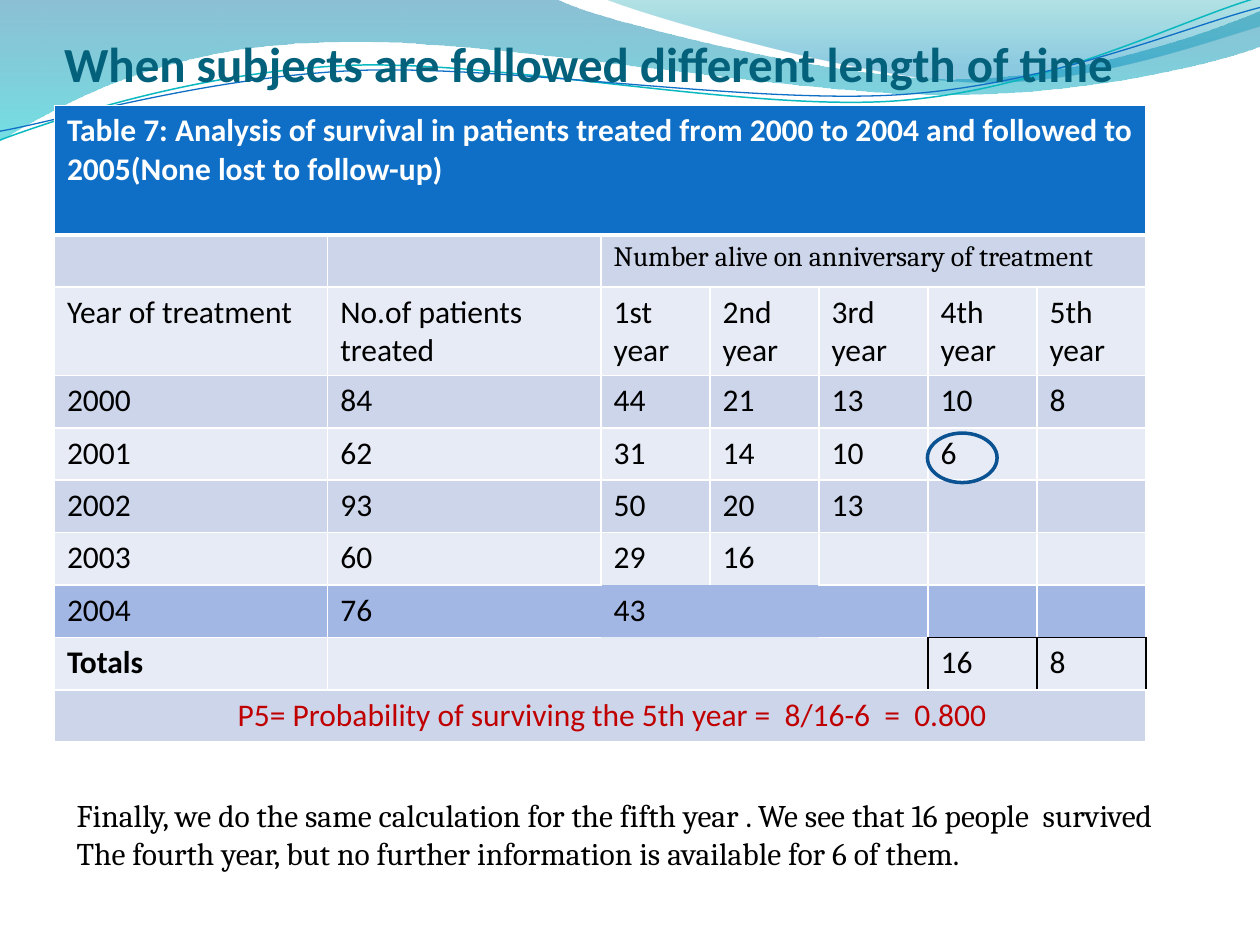
"""Build the survival analysis slide: wave header, follow-up table and closing remark."""
from lxml import etree
from pptx import Presentation
from pptx.dml import color
from pptx.enum import shapes, text
from pptx.oxml import ns
from pptx import util as u

COLORS = {
    "title": "04617B", "header": "0F6FC6", "band": "CCD5EA", "light": "E7EBF5",
    "highlight": "A3B7E5", "result": "C00000", "ring": "0B5292",
    "white": "FFFFFF", "black": "000000", "teal": "0AB8BF",
    "wave_blue": "0074A1", "wave_cyan": "00C6CF", "wave_green": "00A1A9", "wave_sky": "008BBF",
}
BODY, SERIF = "Calibri", "Cambria"

WIDE_WAVE = [(0, -1), (317, -1), (343, 12, 478, 45, 546, 45), (614, 45, 690, 19, 720, 6),
             (721, 26), (708, 32, 626, 55, 537, 54), (446, 54, 275, 20, 185, 24),
             (93, 26, 33, 60, -1, 81)]
RIGHT_WAVE = [(345, -1), (366, 8, 491, 45, 554, 47), (620, 50, 692, 23, 720, 15), (720, -1)]
TEAL_LINE = [(0, 80), (35, 67, 114, 41, 199, 37.4), (284, 34, 427, 64, 513, 57.6),
             (600, 51, 675, 11, 719, -1.4)]
BLUE_LINE = [(0, 75), (34, 69, 118, 44, 204, 40.3), (290, 37, 430, 60, 516, 54),
             (602, 48, 678, 15, 720, 4.3)]

TABLE_ROWS = [
    ["Table 7: Analysis of survival in patients treated from 2000 to 2004 "
     "and followed to 2005(None lost to follow-up)"],
    ["", "", "Number alive on anniversary of treatment"],
    ["Year of treatment", "No.of patients treated",
     "1st year", "2nd year", "3rd year", "4th year", "5th year"],
    ["2000", "84", "44", "21", "13", "10", "8"],
    ["2001", "62", "31", "14", "10", "6"],
    ["2002", "93", "50", "20", "13"],
    ["2003", "60", "29", "16"],
    ["2004", "76", "43"],
    ["Totals", "", "", "", "", "16", "8"],
    ["P5= Probability of surviving the 5th year =  8/16-6  =  0.800"],
]
COLUMN_WIDTHS = [156.2, 156.2] + [62.3] * 5
ROW_HEIGHTS = [74] + [29.95] * 9
TITLE_ROW, SPAN_ROW, LAST_YEAR_ROW, TOTALS_ROW, RESULT_ROW = 0, 1, 7, 8, 9
OPEN_COLUMNS = (2, 3)


def rgb(name):
    """Return the named colour."""
    return color.RGBColor.from_string(COLORS[name])


def style_paragraph(paragraph, font_name, size, color_name="black", bold=False):
    """Set the font of a whole paragraph."""
    font = paragraph.font
    font.name, font.size, font.bold = font_name, u.Pt(size), bold
    font.color.rgb = rgb(color_name)


def add_outline(slide, segments, close):
    """Add a freeform of straight lines and cubic curves."""
    corners = [(u.Pt(segment[-2]), u.Pt(segment[-1])) for segment in segments]
    builder = slide.shapes.build_freeform(*corners[0])
    builder.add_line_segments(corners[1:], close=close)
    shape = builder.convert_to_shape()
    shape.shadow.inherit = False
    lines = list(shape._element.iter(ns.qn("a:lnTo")))
    for line, segment in zip(lines, segments[1:]):
        if len(segment) == 6:
            curve = etree.Element(ns.qn("a:cubicBezTo"))
            for x, y in zip(segment[::2], segment[1::2]):
                etree.SubElement(curve, ns.qn("a:pt"), x=str(u.Pt(x) - shape.left),
                                 y=str(u.Pt(y) - shape.top))
            line.getparent().replace(line, curve)
    return shape


def add_wave(slide, segments, stops):
    """Add a filled wave with a translucent downward gradient."""
    shape = add_outline(slide, segments, True)
    shape.line.fill.background()
    shape.fill.gradient()
    shape.fill.gradient_angle = 270
    for stop, (position, name, _) in zip(shape.fill.gradient_stops, stops):
        stop.position, stop.color.rgb = position, rgb(name)
    for element, (_, _, opacity) in zip(shape._element.iter(ns.qn("a:srgbClr")), stops):
        etree.SubElement(element, ns.qn("a:alpha"), val=str(opacity * 1000))


def add_curve(slide, segments, color_name, width):
    """Add an open curved line."""
    shape = add_outline(slide, segments, False)
    shape.fill.background()
    shape.line.color.rgb, shape.line.width = rgb(color_name), u.Pt(width)


def add_ring(slide, left, top, width, height):
    """Add an unfilled ellipse that marks a value."""
    shape = slide.shapes.add_shape(shapes.MSO_SHAPE.OVAL, u.Pt(left), u.Pt(top),
                                   u.Pt(width), u.Pt(height))
    shape.shadow.inherit = False
    shape.fill.background()
    shape.line.color.rgb, shape.line.width = rgb("ring"), u.Pt(2)


def add_text(slide, box, lines, **style):
    """Add a text box with one paragraph per line."""
    frame = slide.shapes.add_textbox(*map(u.Pt, box)).text_frame
    frame.word_wrap = True
    frame.text = "\n".join(lines)
    for paragraph in frame.paragraphs:
        style_paragraph(paragraph, **style)
    return frame


def horizontal_border(boundary, column):
    """Return colour and width of the rule above row number boundary."""
    if boundary in (LAST_YEAR_ROW, TOTALS_ROW) and column in OPEN_COLUMNS:
        return None, 0
    if boundary == TOTALS_ROW and column >= 5:
        return "black", 1
    return "white", 3 if boundary == 1 else 1


def vertical_border(row, boundary):
    """Return colour and width of the rule left of column number boundary."""
    if row in (LAST_YEAR_ROW, TOTALS_ROW) and boundary in (2, 3, 4):
        return None, 0
    return ("black" if row == TOTALS_ROW and boundary >= 5 else "white"), 1


def set_borders(cell, row, column):
    """Write the four borders of a table cell."""
    borders = {"a:lnL": vertical_border(row, column), "a:lnR": vertical_border(row, column + 1),
               "a:lnT": horizontal_border(row, column),
               "a:lnB": horizontal_border(row + 1, column)}
    properties = cell._tc.get_or_add_tcPr()
    for tag, (name, width) in borders.items():
        line = etree.SubElement(properties, ns.qn(tag), w=str(int(u.Pt(width))))
        if name:
            fill = etree.SubElement(line, ns.qn("a:solidFill"))
            etree.SubElement(fill, ns.qn("a:srgbClr"), val=COLORS[name])
        else:
            etree.SubElement(line, ns.qn("a:noFill"))


def row_fill(row):
    """Return the fill colour name of a table row."""
    special = {TITLE_ROW: "header", LAST_YEAR_ROW: "highlight"}
    return special.get(row, "band" if row % 2 else "light")


def cell_style(row, column):
    """Return the font settings of a table cell."""
    if row == SPAN_ROW and column == 2:
        return {"font_name": SERIF, "size": 16}
    ink = {TITLE_ROW: "white", RESULT_ROW: "result"}.get(row, "black")
    bold = row == TITLE_ROW or (row == TOTALS_ROW and column == 0)
    return {"font_name": BODY, "size": 18, "color_name": ink, "bold": bold}


def add_survival_table(slide, left, top):
    """Add the table of patients alive on each anniversary."""
    table = slide.shapes.add_table(
        len(ROW_HEIGHTS), len(COLUMN_WIDTHS), u.Pt(left), u.Pt(top),
        u.Pt(sum(COLUMN_WIDTHS)), u.Pt(sum(ROW_HEIGHTS))).table
    table.first_row = table.horz_banding = False
    for column, width in zip(table.columns, COLUMN_WIDTHS):
        column.width = u.Pt(width)
    for row, height in enumerate(ROW_HEIGHTS):
        table.rows[row].height = u.Pt(height)
        for column in range(len(COLUMN_WIDTHS)):
            cell = table.cell(row, column)
            set_borders(cell, row, column)
            cell.fill.solid()
            cell.fill.fore_color.rgb = rgb(row_fill(row))
            if column < len(TABLE_ROWS[row]):
                cell.text = TABLE_ROWS[row][column]
            style_paragraph(cell.text_frame.paragraphs[0], **cell_style(row, column))
    for row, column in ((TITLE_ROW, 0), (SPAN_ROW, 2), (RESULT_ROW, 0)):
        table.cell(row, column).merge(table.cell(row, len(COLUMN_WIDTHS) - 1))
    result = table.cell(RESULT_ROW, 0).text_frame.paragraphs[0]
    result._p.get_or_add_pPr().set("marL", str(u.Pt(97.5)))


def main():
    """Build and save the slide."""
    presentation = Presentation()
    presentation.slide_width, presentation.slide_height = u.Pt(720), u.Pt(540)
    slide = presentation.slides.add_slide(presentation.slide_layouts[6])
    add_wave(slide, WIDE_WAVE, [(0, "wave_blue", 45), (1, "wave_cyan", 55)])
    add_wave(slide, RIGHT_WAVE, [(0, "wave_green", 30), (0.8, "wave_sky", 45)])
    add_curve(slide, TEAL_LINE, "teal", 0.85)
    add_curve(slide, BLUE_LINE, "header", 0.75)
    title = add_text(slide, (36.7, 1.4, 648, 51.1),
                     ["When subjects are followed different length of time"],
                     font_name=BODY, size=28, color_name="title", bold=True)
    title.vertical_anchor = text.MSO_ANCHOR.BOTTOM
    title.margin_left = title.margin_right = title.margin_bottom = 0
    add_survival_table(slide, 31.1, 60.2)
    add_ring(slide, 530, 247.5, 39.8, 28.3)
    add_text(slide, (36.7, 451.4, 668.9, 51.1),
             ["Finally, we do the same calculation for the fifth year . "
              "We see that 16 people  survived",
              "The fourth year, but no further information is available for 6 of them."],
             font_name=SERIF, size=18)
    presentation.save("out.pptx")


if __name__ == "__main__":
    main()
